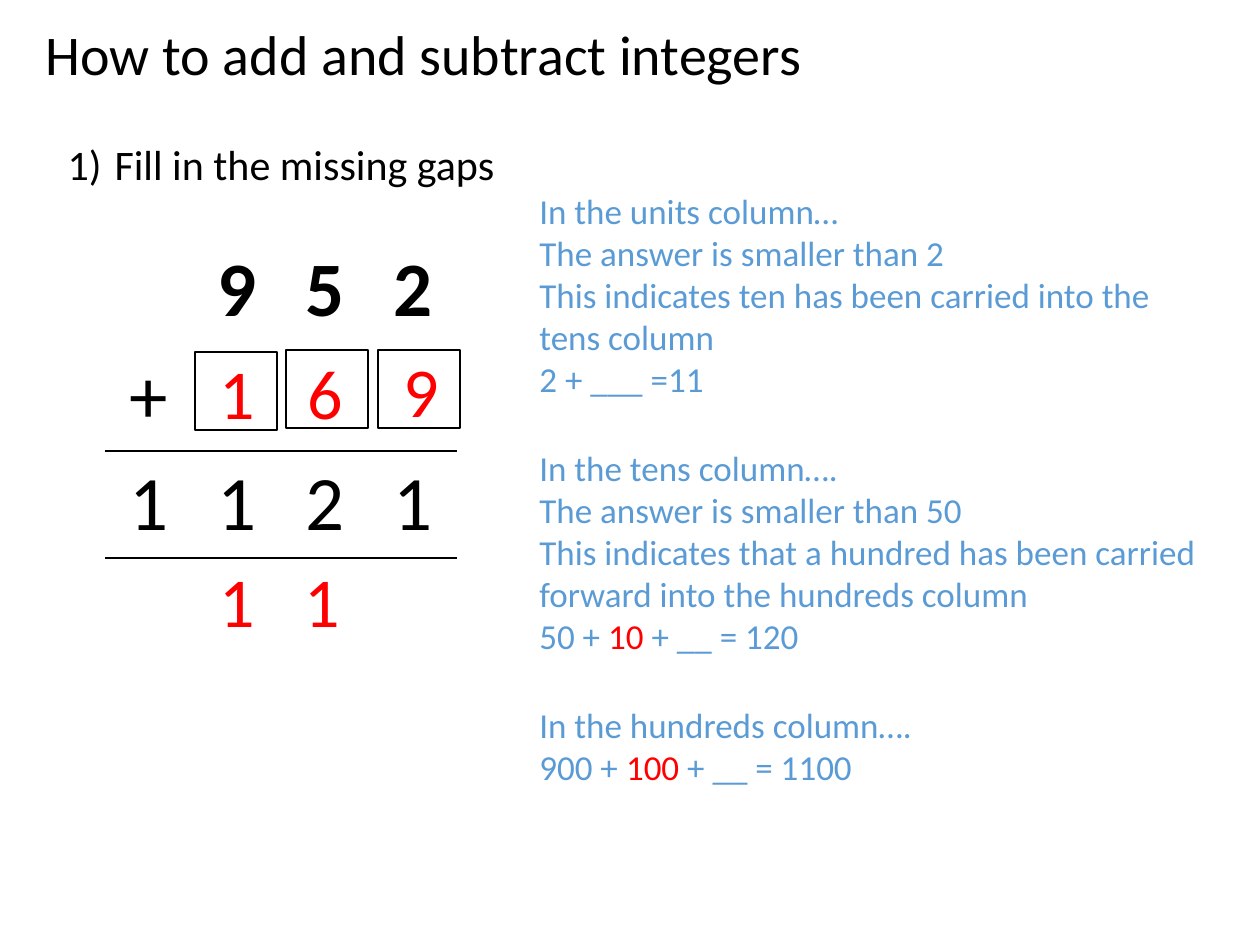
from lxml.etree import SubElement
from pptx import Presentation
from pptx.dml.color import RGBColor
from pptx.enum.shapes import MSO_SHAPE
from pptx.enum.text import MSO_ANCHOR, MSO_AUTO_SIZE, PP_ALIGN
from pptx.oxml import parse_xml
from pptx.oxml.ns import nsdecls, qn
from pptx.util import Pt

PX = 914400 // 126
COLORS = {"ink": "000000", "answer": "FF0000", "hint": "5B9BD5"}
NO_GRID_STYLE = "{2D5ABB26-0587-4C30-8999-92F81FD0307C}"


def add_run(paragraph, text, size, color, bold=False):
    run = paragraph.add_run()
    run.text = text
    look = {"name": "Calibri", "size": Pt(size), "bold": bold}
    for key, value in look.items():
        setattr(run.font, key, value)
    run.font.color.rgb = RGBColor.from_string(COLORS[color])


def place(shape, left, top, width, height):
    box = {"left": left, "top": top, "width": width, "height": height}
    for key, value in box.items():
        setattr(shape, key, value * PX)


prs = Presentation()
prs.slide_width, prs.slide_height = 1260 * PX, 945 * PX
slide = prs.slides.add_slide(prs.slide_layouts[1])
shapes = slide.shapes

# Title and numbered question
title, question = shapes.title, slide.placeholders[1]
place(title, 33, 0, 930, 115)
place(question, 55, 132, 709, 63)
for holder, text, size, anchor, spacing in (
    (title, "How to add and subtract integers", 32, MSO_ANCHOR.MIDDLE, 0.9),
    (question, "Fill in the missing gaps", 24, MSO_ANCHOR.TOP, 1.0),
):
    frame = holder.text_frame
    frame.auto_size = MSO_AUTO_SIZE.NONE
    frame.vertical_anchor = anchor
    line = frame.paragraphs[0]
    layout = {"alignment": PP_ALIGN.LEFT, "line_spacing": spacing, "space_before": Pt(0)}
    for key, value in layout.items():
        setattr(line, key, value)
    add_run(line, text, size, "ink")

numbering = question.text_frame.paragraphs[0]._p.get_or_add_pPr()
numbering.set("marL", str(47 * PX))
numbering.set("indent", str(-47 * PX))
SubElement(numbering, qn("a:buFont"), typeface="+mj-lt")
SubElement(numbering, qn("a:buAutoNum"), type="arabicParenR")

# Column addition
SUM_ROWS = [" 952", "+   ", "1121"]
COL, ROW = 88, 107
grid = shapes.add_table(3, 4, 105 * PX, 237 * PX, 4 * COL * PX, 3 * ROW * PX)
addition = grid.table
addition.first_row = addition.horz_banding = False
addition._tbl.tblPr.find(qn("a:tableStyleId")).text = NO_GRID_STYLE
for column in addition.columns:
    column.width = COL * PX
for r, digits in enumerate(SUM_ROWS):
    addition.rows[r].height = ROW * PX
    for c, digit in enumerate(digits):
        cell = addition.cell(r, c)
        cell.fill.background()
        if digit != " ":
            line = cell.text_frame.paragraphs[0]
            line.alignment = PP_ALIGN.CENTER
            add_run(line, digit, 44, "ink", bold=r == 0)
        # Rules above and below the result row
        sides = ((), ("lnB",), ("lnT", "lnB"))[r]
        for i, side in enumerate(sides):
            cell._tc.get_or_add_tcPr().insert(i, parse_xml(
                f'<a:{side} {nsdecls("a")} w="12700"><a:solidFill>'
                f'<a:srgbClr val="{COLORS["ink"]}"/></a:solidFill></a:{side}>'))

# Gap boxes
for left, top in ((195, 352), (286, 350), (378, 350)):
    gap = shapes.add_shape(MSO_SHAPE.RECTANGLE, left * PX, top * PX, 82 * PX, 78 * PX)
    gap.shadow.inherit = False
    gap.fill.background()
    gap.line.color.rgb = RGBColor.from_string(COLORS["ink"])
    gap.line.width = Pt(1)

# Missing digits, then carried digits
for digit, left, top in (("1", 207, 343), ("6", 295, 343), ("9", 391, 341),
                         ("1", 207, 551), ("1", 292, 551)):
    answer = shapes.add_textbox(left * PX, top * PX, 69 * PX, 97 * PX)
    answer.text_frame.word_wrap = True
    add_run(answer.text_frame.paragraphs[0], digit, 40, "answer")

# Hints: each line is a list of (text, color) runs
HINTS = [
    (183, 224, [
        [("In the units column…", "hint")],
        [("The answer is smaller than 2", "hint")],
        [("This indicates ten has been carried into the tens column", "hint")],
        [("2 + ___ =11", "hint")],
    ]),
    (440, 224, [
        [("In the tens column….", "hint")],
        [("The answer is smaller than 50", "hint")],
        [("This indicates that a hundred has been carried forward "
          "into the hundreds column", "hint")],
        [("50 + ", "hint"), ("10 ", "answer"), ("+ __ = 120", "hint")],
    ]),
    (697, 136, [
        [("In the hundreds column….", "hint")],
        [("900 + ", "hint"), ("100", "answer"), (" + __ = 1100", "hint")],
    ]),
]
for top, height, lines in HINTS:
    hint = shapes.add_textbox(527 * PX, top * PX, 703 * PX, height * PX).text_frame
    hint.word_wrap = True
    for i, runs in enumerate(lines):
        line = hint.add_paragraph() if i else hint.paragraphs[0]
        for text, color in runs:
            add_run(line, text, 20, color)

prs.save("out.pptx")
